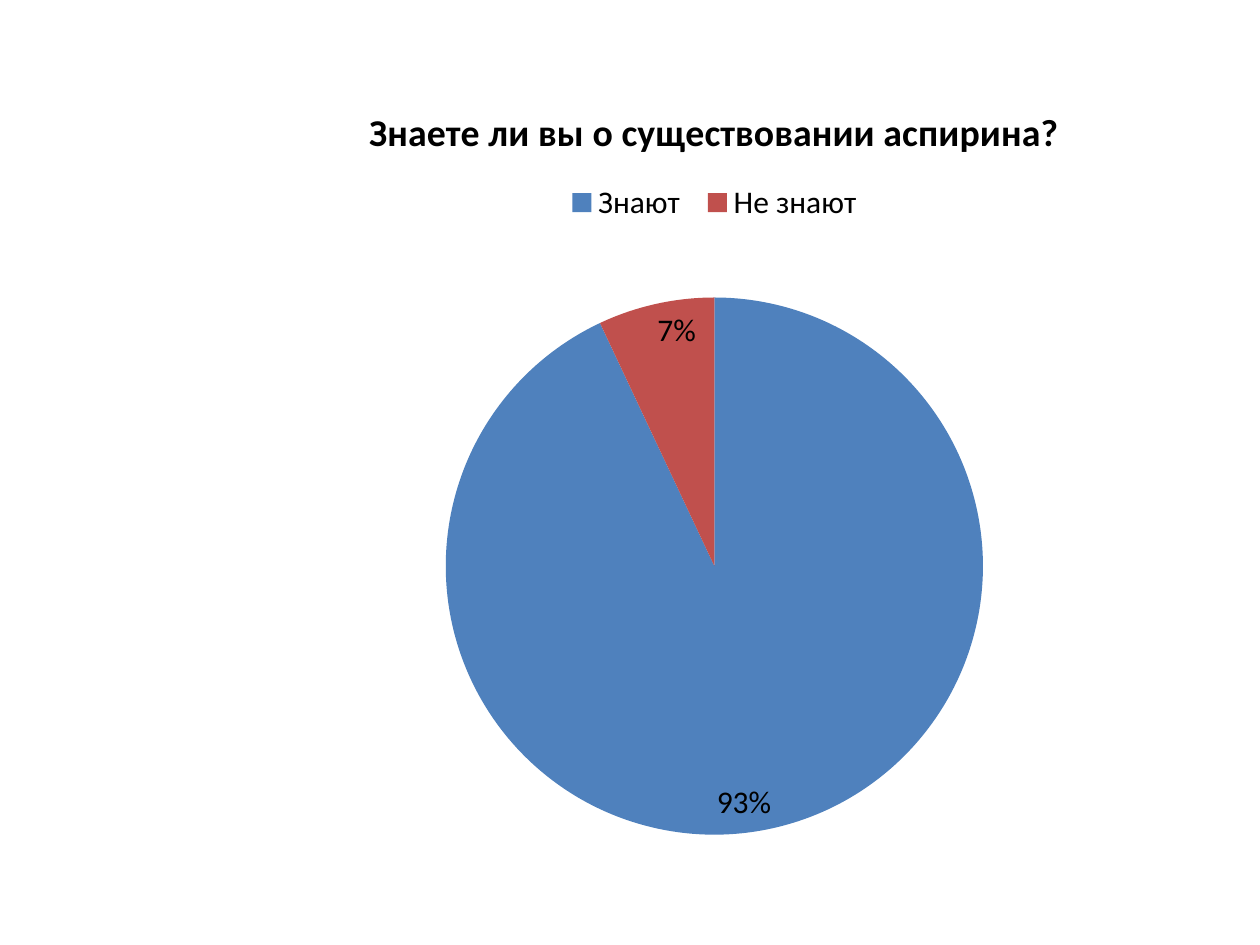
from pptx import Presentation
from pptx.chart.data import CategoryChartData
from pptx.dml.color import RGBColor
from pptx.enum.chart import XL_CHART_TYPE as Kind, XL_LABEL_POSITION as Spot
from pptx.enum.chart import XL_LEGEND_POSITION as Side
from pptx.oxml import parse_xml
from pptx.oxml.ns import nsdecls
from pptx.util import Inches, Pt


def style(font, size, bold=False):
    font.name = "Calibri"
    font.size = Pt(size)
    font.bold = bold
    font.color.rgb = RGBColor.from_string("000000")


prs = Presentation()
prs.slide_width, prs.slide_height = Inches(10), Inches(7.5)
slide = prs.slides.add_slide(prs.slide_layouts[6])

# Survey answers
title = "Знаете ли вы о существовании аспирина?"
data = CategoryChartData()
data.categories = ["Знают ", "Не знают"]
data.add_series(title, (93, 7))

# Pie chart
chart = slide.shapes.add_chart(Kind.PIE, Inches(1.57), Inches(0.6),
                               Inches(8.2), Inches(6.23), data).chart
style(chart.font, 18)
plot = chart.plots[0]
plot.vary_by_categories = True
for i, color in enumerate(("4F81BD", "C0504D")):
    fill = plot.series[0].points[i].format.fill
    fill.solid()
    fill.fore_color.rgb = RGBColor.from_string(color)

# Title
chart.has_title = True
frame = chart.chart_title.text_frame
frame.text = title
style(frame.paragraphs[0].font, 21.6, True)
chart.chart_title.include_in_layout = False

# Legend
chart.has_legend = True
chart.legend.position = Side.TOP
chart.legend.include_in_layout = False
style(chart.legend.font, 18)

# Percent labels
plot.has_data_labels = True
labels = plot.data_labels
labels.show_percentage = True
labels.show_value = False
labels.number_format = "0%"
labels.number_format_is_linked = False
labels.position = Spot.INSIDE_END
style(labels.font, 18)

# Place of the pie inside the chart
area = chart._chartSpace.chart.plotArea
for old in area.xpath("c:layout"):
    area.remove(old)
area.insert(0, parse_xml(
    f'<c:layout {nsdecls("c")}><c:manualLayout><c:layoutTarget val="inner"/>'
    '<c:xMode val="edge"/><c:yMode val="edge"/><c:x val="0.24"/><c:y val="0.28"/>'
    '<c:w val="0.52"/><c:h val="0.69"/></c:manualLayout></c:layout>'))

prs.save("out.pptx")
